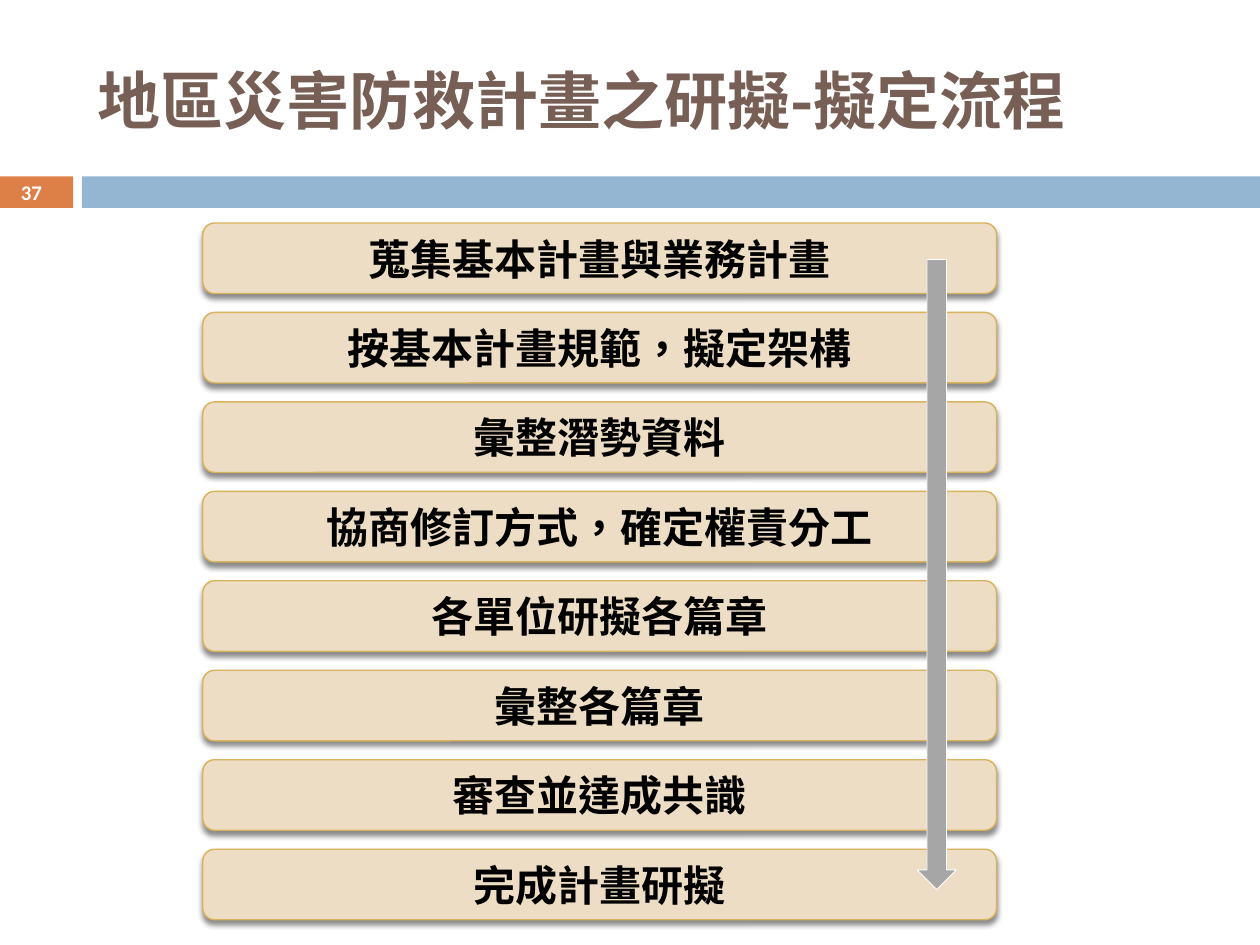
from dataclasses import dataclass

import lxml.etree
import pptx
import pptx.dml.color
import pptx.enum.shapes
import pptx.enum.text
import pptx.oxml.ns
import pptx.util

Inches = pptx.util.Inches
Pt = pptx.util.Pt
qn = pptx.oxml.ns.qn
SHAPE = pptx.enum.shapes.MSO_SHAPE
ALIGN = pptx.enum.text.PP_ALIGN


@dataclass(frozen=True)
class Theme:
    cjk: str = "Noto Sans CJK SC"
    latin: str = "Calibri"
    title: str = "775F55"
    orange: str = "DD8047"
    blue: str = "94B6D2"
    step: str = "EDDDC4"
    step_line: str = "D8B25C"
    arrow: str = "A6A6A6"
    white: str = "FFFFFF"
    black: str = "000000"
    title_size: float = 36
    step_size: float = 24
    number_size: float = 11.9


THEME = Theme()
STEPS = [
    "蒐集基本計畫與業務計畫",
    "按基本計畫規範，擬定架構",
    "彙整潛勢資料",
    "協商修訂方式，確定權責分工",
    "各單位研擬各篇章",
    "彙整各篇章",
    "審查並達成共識",
    "完成計畫研擬",
]
STEP_TOP = 1.77
STEP_PITCH = 0.71


def rgb(value):
    return pptx.dml.color.RGBColor.from_string(value)


def write(s, text, size, color, font, align):
    tf = s.text_frame
    tf.text = text
    tf.word_wrap = True
    tf.auto_size = pptx.enum.text.MSO_AUTO_SIZE.NONE
    tf.vertical_anchor = pptx.enum.text.MSO_ANCHOR.MIDDLE
    tf.margin_top = tf.margin_bottom = 0
    p = tf.paragraphs[0]
    p.alignment = align
    r = p.runs[0]
    r.font.size = Pt(size)
    r.font.bold = True
    r.font.color.rgb = rgb(color)
    r.font.name = font
    rpr = r.font._element
    rpr.set("lang", "zh-TW")
    ea = lxml.etree.SubElement(rpr, qn("a:ea"))
    ea.set("typeface", font)


def add_block(sp, kind, box, fill, line=None, width=0.5):
    s = sp.add_shape(kind, *map(Inches, box))
    s.shadow.inherit = False
    s.fill.solid()
    s.fill.fore_color.rgb = rgb(fill)
    if line:
        s.line.color.rgb = rgb(line)
        s.line.width = Pt(width)
    else:
        s.line.fill.background()
    return s


def add_drop_shadow(s):
    effects = s._element.spPr.find(qn("a:effectLst"))
    shadow = lxml.etree.SubElement(effects, qn("a:outerShdw"))
    shadow.set("blurRad", str(Pt(3)))
    shadow.set("dist", str(Pt(2.4)))
    shadow.set("dir", "5400000")
    shadow.set("rotWithShape", "0")
    color = lxml.etree.SubElement(shadow, qn("a:srgbClr"))
    color.set("val", THEME.black)
    lxml.etree.SubElement(color, qn("a:alpha")).set("val", "45000")


def add_title(sp, text):
    s = sp.title
    s.left, s.top, s.width, s.height = map(Inches, (0.67, 0.25, 8.92, 1.08))
    write(s, text, THEME.title_size, THEME.title, THEME.cjk, ALIGN.LEFT)


def add_number(sp, text):
    s = sp.add_textbox(*map(Inches, (-0.04, 1.39, 0.58, 0.27)))
    write(s, text, THEME.number_size, THEME.white, THEME.latin, ALIGN.CENTER)


def add_step(sp, index, text):
    box = (1.61, STEP_TOP + index * STEP_PITCH, 6.3, 0.56)
    s = add_block(sp, SHAPE.ROUNDED_RECTANGLE, box, THEME.step, THEME.step_line, 0.79)
    add_drop_shadow(s)
    write(s, text, THEME.step_size, THEME.black, THEME.cjk, ALIGN.CENTER)


def main():
    prs = pptx.Presentation()
    prs.slide_width, prs.slide_height = Inches(10), Inches(7.5)
    sp = prs.slides.add_slide(prs.slide_layouts[5]).shapes
    add_block(sp, SHAPE.RECTANGLE, (0, 1.4, 0.58, 0.25), THEME.orange)
    add_block(sp, SHAPE.RECTANGLE, (0.65, 1.4, 9.35, 0.25), THEME.blue)
    add_number(sp, "37")
    add_title(sp, "地區災害防救計畫之研擬-擬定流程")
    for index, text in enumerate(STEPS):
        add_step(sp, index, text)
    add_block(sp, SHAPE.DOWN_ARROW, (7.28, 2.06, 0.31, 5), THEME.arrow, THEME.white)
    prs.save("out.pptx")


if __name__ == "__main__":
    main()
